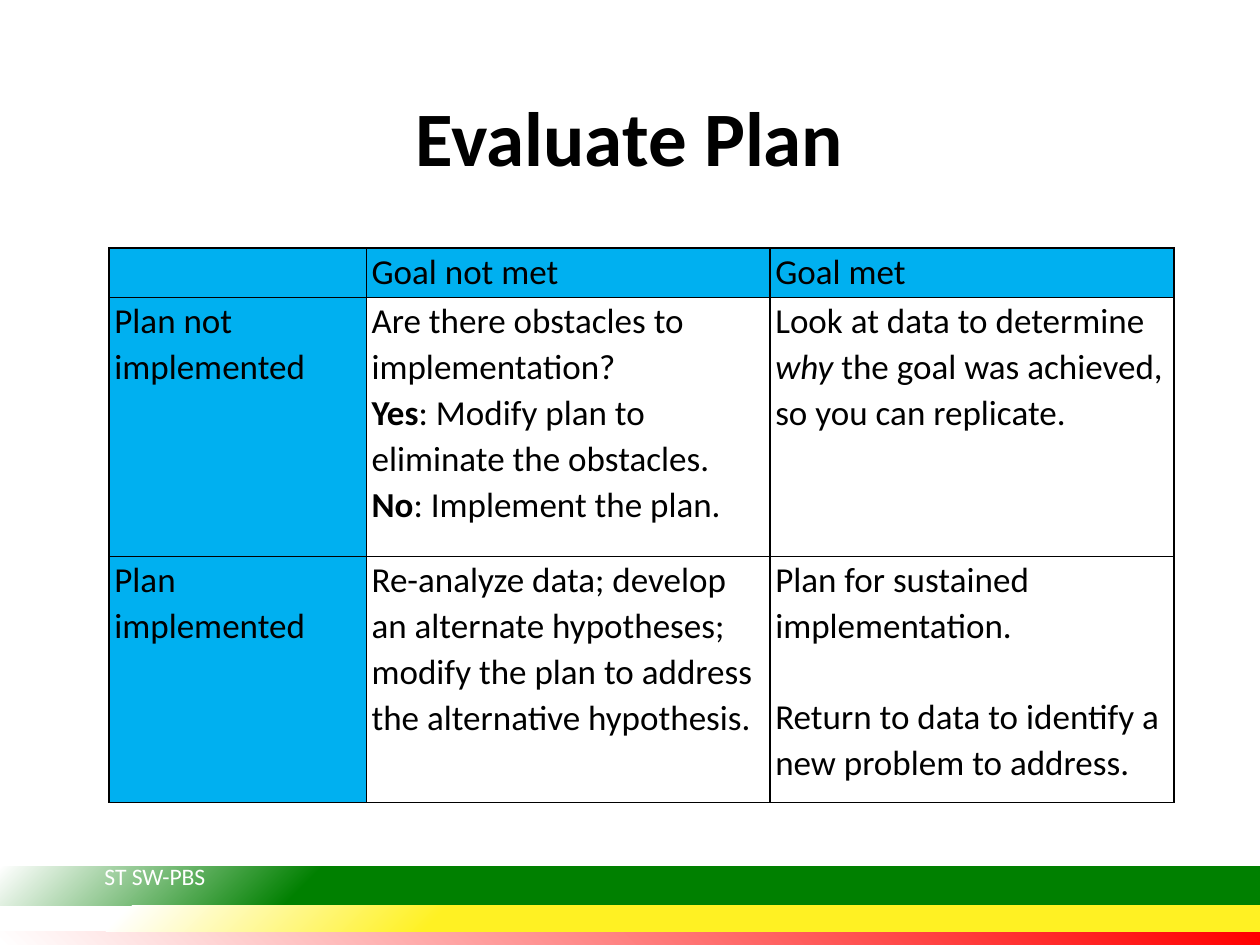
"""Build the Evaluate Plan slide with its decision table and striped footer."""
from typing import NamedTuple

from lxml.etree import SubElement
from pptx import Presentation
from pptx.dml.color import RGBColor
from pptx.enum.shapes import MSO_SHAPE
from pptx.enum.text import MSO_ANCHOR, MSO_AUTO_SIZE, PP_ALIGN
from pptx.oxml import parse_xml
from pptx.oxml.ns import nsdecls, qn
from pptx.util import Pt

BLACK = RGBColor(0x00, 0x00, 0x00)
WHITE = RGBColor(0xFF, 0xFF, 0xFF)
BLUE = RGBColor(0x00, 0xB0, 0xF0)
RED = RGBColor(0xFF, 0x00, 0x00)
GREEN = RGBColor(0x00, 0x80, 0x00)
YELLOW = RGBColor(0xFF, 0xF1, 0x23)
FONT = "Calibri"


class Run(NamedTuple):
    text: str
    bold: bool = False
    italic: bool = False


class Para(NamedTuple):
    runs: list[Run]
    before: float = 0


class Stripe(NamedTuple):
    top: float
    height: float
    color: RGBColor
    start: int
    end: int
    focus: str


STRIPES = [
    Stripe(532, 8.64, RED, 0, 100, 'l="100000" b="100000"'),
    Stripe(495.3, 22.4, GREEN, 75, 100, 'l="100000" t="100000"'),
    Stripe(517.7, 14.4, YELLOW, 65, 90, 'l="100000" t="100000"'),
]
COLS = [147, 230.7, 230.7]
ROWS = [28.4, 147.8, 140.6]


def plain(text: str, before: float = 0) -> Para:
    return Para([Run(text)], before)


CELLS = [
    [[], [plain("Goal not met")], [plain("Goal met")]],
    [
        [plain("Plan not implemented")],
        [
            plain("Are there obstacles to implementation?"),
            Para([Run("Yes", bold=True), Run(": Modify plan to eliminate the obstacles.")]),
            Para([Run("No", bold=True), Run(": Implement the plan.")]),
        ],
        [Para([
            Run("Look at data to determine "),
            Run("why", italic=True),
            Run(" the goal was achieved, so you can replicate."),
        ])],
    ],
    [
        [plain("Plan implemented")],
        [plain("Re-analyze data; develop an alternate hypotheses; "
               "modify the plan to address the alternative hypothesis.")],
        [
            plain("Plan for sustained implementation."),
            plain("Return to data to identify a new problem to address.", before=26),
        ],
    ],
]


def add_run(p, run: Run, size: float, color: RGBColor):
    r = p.add_run()
    r.text = run.text
    f = r.font
    f.name, f.size, f.bold, f.italic = FONT, Pt(size), run.bold, run.italic
    f.color.rgb = color
    return r


def add_stripe(s, stripe: Stripe) -> None:
    sp = s.shapes.add_shape(MSO_SHAPE.RECTANGLE, 0, Pt(stripe.top), Pt(720), Pt(stripe.height))
    sp.shadow.inherit = False
    sp.line.fill.background()
    sp.fill.background()
    spPr = sp._element.spPr
    spPr.replace(spPr.find(qn("a:noFill")), parse_xml(
        f'<a:gradFill {nsdecls("a")} rotWithShape="1"><a:gsLst>'
        f'<a:gs pos="{stripe.start * 1000}"><a:srgbClr val="{stripe.color}"/></a:gs>'
        f'<a:gs pos="{stripe.end * 1000}"><a:srgbClr val="{WHITE}"/></a:gs></a:gsLst>'
        f'<a:path path="circle"><a:fillToRect {stripe.focus}/></a:path></a:gradFill>'))


def add_footer(s, text: str) -> None:
    tb = s.shapes.add_textbox(Pt(52.6), Pt(488.9), Pt(138.2), Pt(23.8))
    tf = tb.text_frame
    tf.word_wrap = True
    tf.auto_size = MSO_AUTO_SIZE.SHAPE_TO_FIT_TEXT
    r = add_run(tf.paragraphs[0], Run(text), 13.5, WHITE)
    fill = r.font._element.find(qn("a:solidFill"))
    fill.addnext(parse_xml(
        f'<a:effectLst {nsdecls("a")}><a:outerShdw blurRad="38100" dist="38100" dir="2700000">'
        f'<a:srgbClr val="{BLACK}"><a:alpha val="43000"/></a:srgbClr></a:outerShdw></a:effectLst>'))


def set_borders(cell) -> None:
    tcPr = cell._tc.get_or_add_tcPr()
    for i, side in enumerate(("lnL", "lnR", "lnT", "lnB")):
        ln = SubElement(tcPr, qn(f"a:{side}"), w=str(Pt(1)))
        SubElement(SubElement(ln, qn("a:solidFill")), qn("a:srgbClr"), val=str(BLACK))
        tcPr.insert(i, ln)


def fill_cell(cell, paras: list[Para], shaded: bool) -> None:
    cell.margin_left = cell.margin_right = Pt(3)
    cell.margin_top = cell.margin_bottom = 0
    if shaded:
        cell.fill.solid()
        cell.fill.fore_color.rgb = BLUE
    else:
        cell.fill.background()
    set_borders(cell)
    tf = cell.text_frame
    for i, para in enumerate(paras):
        p = tf.add_paragraph() if i else tf.paragraphs[0]
        p.line_spacing = 1.07
        p.space_before = Pt(para.before)
        for run in para.runs:
            add_run(p, run, 20, BLACK)


def add_plan_table(s) -> None:
    frame = s.shapes.add_table(len(ROWS), len(COLS), Pt(62.4), Pt(141.7), Pt(sum(COLS)), Pt(sum(ROWS)))
    table = frame.table
    table.first_row = table.horz_banding = False
    for col, width in zip(table.columns, COLS):
        col.width = Pt(width)
    for row, height in zip(table.rows, ROWS):
        row.height = Pt(height)
    for i, row in enumerate(CELLS):
        for j, paras in enumerate(row):
            fill_cell(table.cell(i, j), paras, shaded=i == 0 or j == 0)


def set_title(s, text: str) -> None:
    sp = s.shapes.title
    sp.left, sp.top, sp.width, sp.height = Pt(49.5), Pt(28.8), Pt(621), Pt(104.4)
    tf = sp.text_frame
    tf.vertical_anchor = MSO_ANCHOR.MIDDLE
    p = tf.paragraphs[0]
    p.alignment = PP_ALIGN.CENTER
    p.line_spacing = 0.9
    add_run(p, Run(text, bold=True), 44, BLACK)


def main() -> None:
    prs = Presentation()
    prs.slide_width, prs.slide_height = Pt(720), Pt(540)
    s = prs.slides.add_slide(prs.slide_layouts[5])
    for stripe in STRIPES:
        add_stripe(s, stripe)
    add_footer(s, "ST SW-PBS")
    add_plan_table(s)
    set_title(s, "Evaluate Plan")
    prs.save("out.pptx")


if __name__ == "__main__":
    main()
